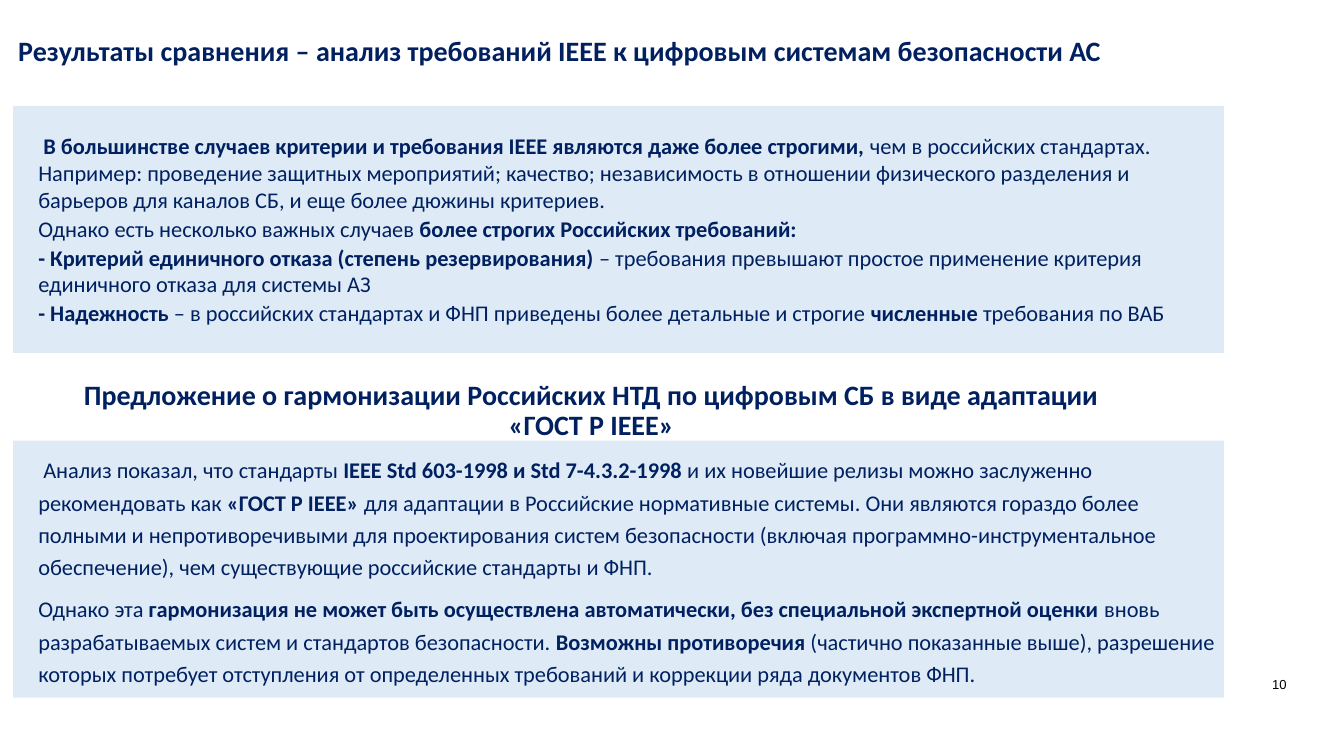
from dataclasses import dataclass

from lxml.etree import SubElement
from pptx import Presentation
from pptx.dml.color import RGBColor
from pptx.enum.text import MSO_ANCHOR, MSO_AUTO_SIZE, PP_ALIGN
from pptx.oxml.ns import qn
from pptx.util import Inches, Pt


@dataclass(frozen=True)
class Theme:
    ink: RGBColor = RGBColor(0x00, 0x20, 0x60)
    black: RGBColor = RGBColor(0x00, 0x00, 0x00)
    panel: RGBColor = RGBColor(0xDE, 0xEB, 0xF7)
    font: str = "Calibri"
    number_font: str = "Arial"
    heading: float = 20
    body: float = 16
    number: float = 9.3


theme = Theme()
PANEL_LEFT, PANEL_WIDTH = 0.13, 12.01
TEXT_INDENT, FIRST_LINE = 0.25, 0.05


def prepare(box, left, top, width, height, anchor=MSO_ANCHOR.TOP):
    """Place a box and give its text frame no margins."""
    box.left, box.top = Inches(left), Inches(top)
    box.width, box.height = Inches(width), Inches(height)
    frame = box.text_frame
    frame.word_wrap = True
    frame.auto_size = MSO_AUTO_SIZE.NONE
    frame.vertical_anchor = anchor
    frame.margin_left = frame.margin_right = 0
    frame.margin_top = frame.margin_bottom = 0
    return frame


def add_span(para, text, size, bold=False, font=theme.font, color=theme.ink):
    span = para.add_run()
    span.text = text
    span.font.size = Pt(size)
    span.font.bold = bold
    span.font.name = font
    span.font.color.rgb = color


deck = Presentation()
deck.slide_width, deck.slide_height = Inches(13.33), Inches(7.5)
page = deck.slides.add_slide(deck.slide_layouts.get_by_name("Two Content"))
title, findings, proposal = page.placeholders

# Headings: the slide title and the heading above the lower panel
subheading = page.shapes.add_textbox(0, 0, 0, 0)
headings = [
    (title, (0.18, 0.37, 10.95, 0.32), PP_ALIGN.LEFT,
     "Результаты сравнения – анализ требований IEEE к цифровым системам безопасности АС"),
    (subheading, (0.67, 3.78, 10.39, 0.65), PP_ALIGN.CENTER,
     "Предложение о гармонизации Российских НТД по цифровым СБ в виде адаптации «ГОСТ Р IEEE»"),
]
for box, place, align, text in headings:
    para = prepare(box, *place).paragraphs[0]
    para.alignment = align
    para.line_spacing = 0.9
    add_span(para, text, theme.heading, bold=True)

# Panel text: paragraphs of (text, bold) spans
findings_text = [
    [("В большинстве случаев критерии и требования IEEE являются даже более строгими,", True),
     (" чем в российских стандартах. Например: проведение защитных мероприятий; качество; "
      "независимость в отношении физического разделения и барьеров для каналов СБ, "
      "и еще более дюжины критериев.", False)],
    [("Однако есть несколько важных случаев ", False),
     ("более строгих Российских требований:", True)],
    [("- Критерий единичного отказа (степень резервирования) ", True),
     ("– требования превышают простое применение критерия единичного отказа "
      "для системы АЗ", False)],
    [("- Надежность ", True),
     ("– в российских стандартах и ФНП приведены более детальные и строгие ", False),
     ("численные ", True),
     ("требования по ВАБ", False)],
]
proposal_text = [
    [("Анализ показал, что стандарты ", False),
     ("IEEE Std 603-1998 и Std 7-4.3.2-1998 ", True),
     ("и их новейшие релизы можно заслуженно рекомендовать как ", False),
     ("«ГОСТ Р IEEE» ", True),
     ("для адаптации в Российские нормативные системы. Они являются гораздо более полными "
      "и непротиворечивыми для проектирования систем безопасности (включая "
      "программно-инструментальное обеспечение), чем существующие российские стандарты "
      "и ФНП.", False)],
    [("Однако эта ", False),
     ("гармонизация не может быть осуществлена автоматически, "
      "без специальной экспертной оценки", True),
     (" вновь разрабатываемых систем и стандартов безопасности. ", False),
     ("Возможны противоречия", True),
     (" (частично показанные выше), разрешение которых потребует отступления "
      "от определенных требований и коррекции ряда документов ФНП.", False)],
]

# Panels: box, top, height, line spacing, space before, text
panels = [
    (findings, 1.05, 2.45, 1.0, 1.3, findings_text),
    (proposal, 4.37, 2.55, 1.2, 7.3, proposal_text),
]
for box, top, height, line_spacing, gap, paragraphs in panels:
    frame = prepare(box, PANEL_LEFT, top, PANEL_WIDTH, height, MSO_ANCHOR.MIDDLE)
    box.fill.solid()
    box.fill.fore_color.rgb = theme.panel
    for index, spans in enumerate(paragraphs):
        para = frame.add_paragraph() if index else frame.paragraphs[0]
        properties = para._p.get_or_add_pPr()
        properties.set("marL", str(Inches(TEXT_INDENT)))
        properties.set("indent", str(0 if index else Inches(FIRST_LINE)))
        SubElement(properties, qn("a:buNone"))
        para.alignment = PP_ALIGN.LEFT
        para.line_spacing = line_spacing
        para.space_before = Pt(gap if index else 0)
        for text, bold in spans:
            add_span(para, text, theme.body, bold)

# Slide number
number = page.shapes.add_textbox(0, 0, 0, 0)
para = prepare(number, 11.94, 6.67, 0.82, 0.2, MSO_ANCHOR.BOTTOM).paragraphs[0]
para.alignment = PP_ALIGN.RIGHT
add_span(para, "10", theme.number, font=theme.number_font, color=theme.black)

deck.save("out.pptx")
